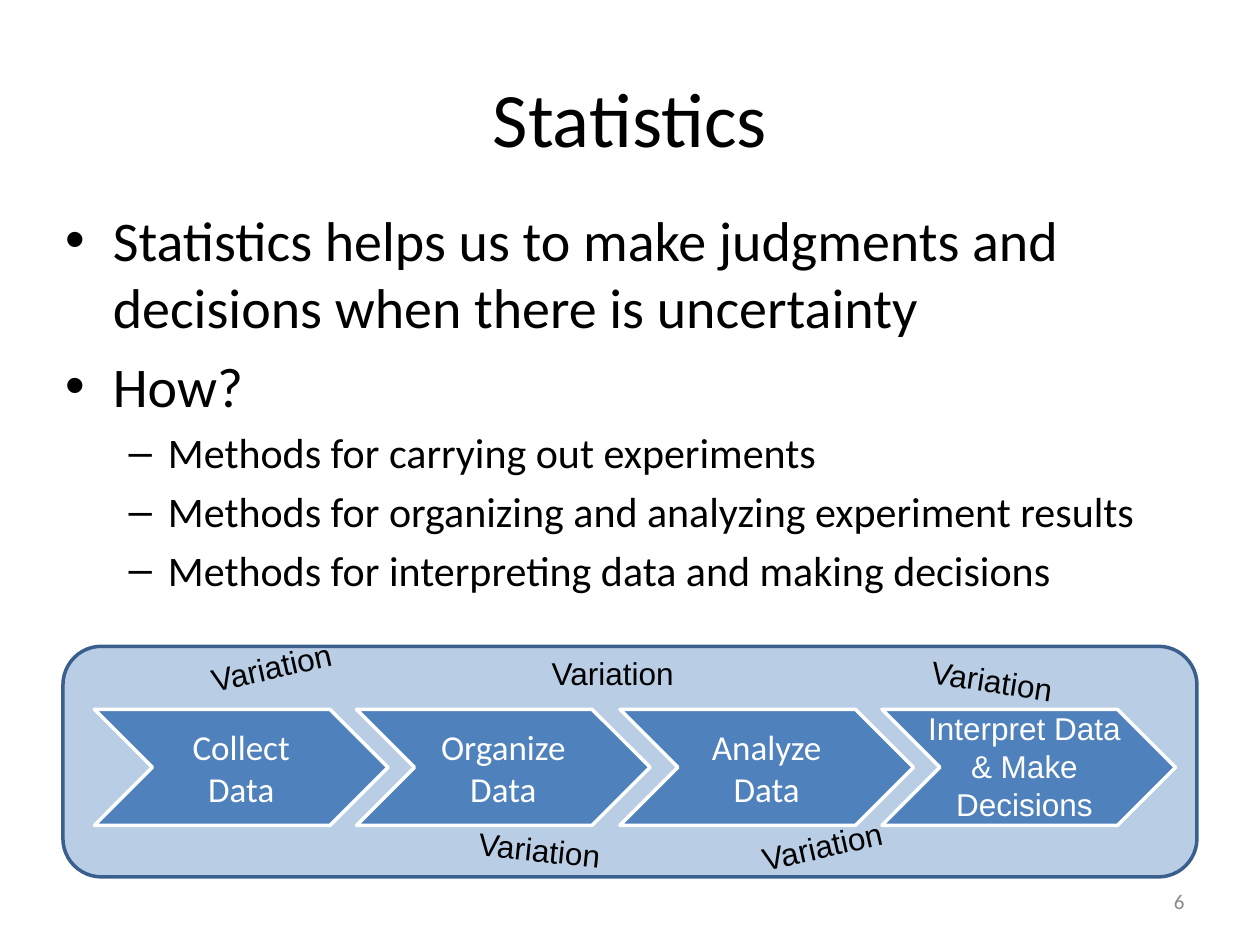
from pptx import Presentation
from pptx.dml.color import RGBColor
from pptx.enum import shapes, text
from pptx import util as u

PX = 9144
BLACK = RGBColor(0x00, 0x00, 0x00)
WHITE = RGBColor(0xFF, 0xFF, 0xFF)
GREY = RGBColor(0x89, 0x89, 0x89)
BLUE = RGBColor(0x4F, 0x81, 0xBD)
PALE_BLUE = RGBColor(0xB9, 0xCD, 0xE5)
DARK_BLUE = RGBColor(0x3A, 0x5F, 0x8C)
LEFT, CENTER, RIGHT = text.PP_ALIGN.LEFT, text.PP_ALIGN.CENTER, text.PP_ALIGN.RIGHT
TOP, MIDDLE = text.MSO_ANCHOR.TOP, text.MSO_ANCHOR.MIDDLE


class Deck:
    """Holds the style and the current slide, and draws each kind of element."""

    def __init__(self, width, height):
        self.show = Presentation()
        self.show.slide_width, self.show.slide_height = self.emu(width, height)
        self.slide = self.show.slides.add_slide(self.show.slide_layouts[1])

    def emu(self, *lengths):
        return [u.Emu(length * PX) for length in lengths]

    def add_words(self, paragraph, wording, size, font="Calibri", color=BLACK):
        run = paragraph.add_run()
        run.text = wording
        run.font.size = u.Pt(size)
        run.font.name = font
        run.font.color.rgb = color

    def fill_placeholder(self, index, box, lines):
        holder = self.slide.placeholders[index]
        holder.left, holder.top, holder.width, holder.height = self.emu(*box)
        frame = holder.text_frame
        for number, (level, wording, size) in enumerate(lines):
            paragraph = frame.add_paragraph() if number else frame.paragraphs[0]
            paragraph.level = level
            self.add_words(paragraph, wording, size)

    def label(self, box, wording, size=18, font="Arial", color=BLACK,
              align=LEFT, anchor=TOP, angle=0):
        holder = self.slide.shapes.add_textbox(*self.emu(*box))
        holder.rotation = angle
        frame = holder.text_frame
        frame.word_wrap = True
        frame.vertical_anchor = anchor
        frame.paragraphs[0].alignment = align
        self.add_words(frame.paragraphs[0], wording, size, font, color)

    def block(self, kind, box, fill, line, wording=""):
        block = self.slide.shapes.add_shape(kind, *self.emu(*box))
        block.shadow.inherit = False
        block.fill.solid()
        block.fill.fore_color.rgb = fill
        block.line.color.rgb = line
        block.line.width = u.Pt(2)
        if wording:
            frame = block.text_frame
            frame.vertical_anchor = MIDDLE
            frame.paragraphs[0].alignment = CENTER
            self.add_words(frame.paragraphs[0], wording, 20, color=WHITE)


def main():
    deck = Deck(1000, 750)
    deck.fill_placeholder(0, (50, 30, 900, 125), [(0, "Statistics", 44)])
    deck.fill_placeholder(1, (42, 158, 950, 495), [
        (0, "Statistics helps us to make judgments and decisions when there is uncertainty", 32),
        (0, "How?", 32),
        (1, "Methods for carrying out experiments", 24),
        (1, "Methods for organizing and analyzing experiment results", 24),
        (1, "Methods for interpreting data and making decisions", 24),
    ])

    deck.block(shapes.MSO_SHAPE.ROUNDED_RECTANGLE, (50, 513, 900, 183), PALE_BLUE, DARK_BLUE)
    variations = [(157, 508, -12.8), (594, 650, -12.8), (729, 521, 8.8),
                  (370, 655, 6), (428, 514, 0)]
    for left, top, angle in variations:
        deck.label((left, top, 129, 40), "Variation", angle=angle)

    steps = ["Collect Data", "Organize Data", "Analyze Data", ""]
    for number, step in reversed(list(enumerate(steps))):
        left = 75 + round(number * 625 / 3)
        deck.block(shapes.MSO_SHAPE.CHEVRON, (left, 563, 233, 92), BLUE, WHITE, step)
    deck.label((717, 558, 192, 101), "Interpret Data & Make Decisions",
               color=WHITE, align=CENTER)

    deck.label((717, 695, 233, 40), "6", 12, "Calibri", GREY, RIGHT, MIDDLE)
    deck.show.save("out.pptx")


if __name__ == "__main__":
    main()
